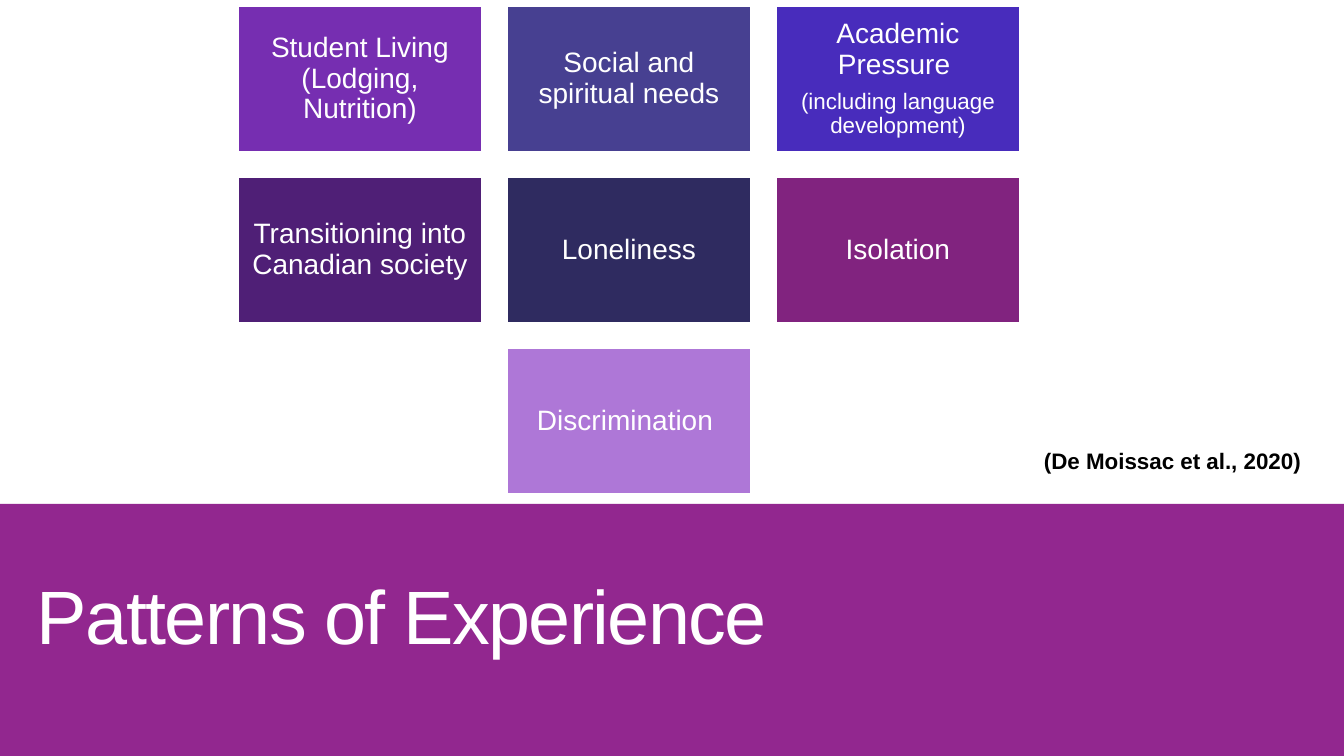
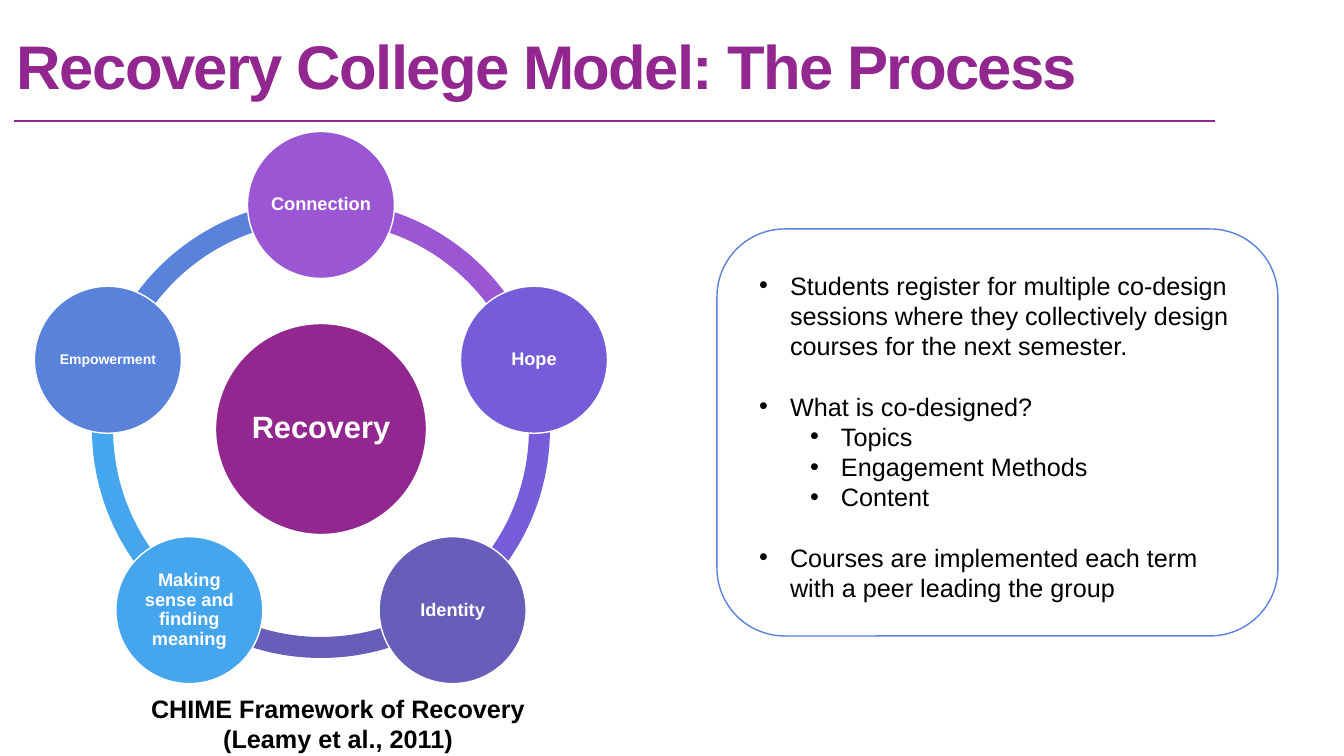
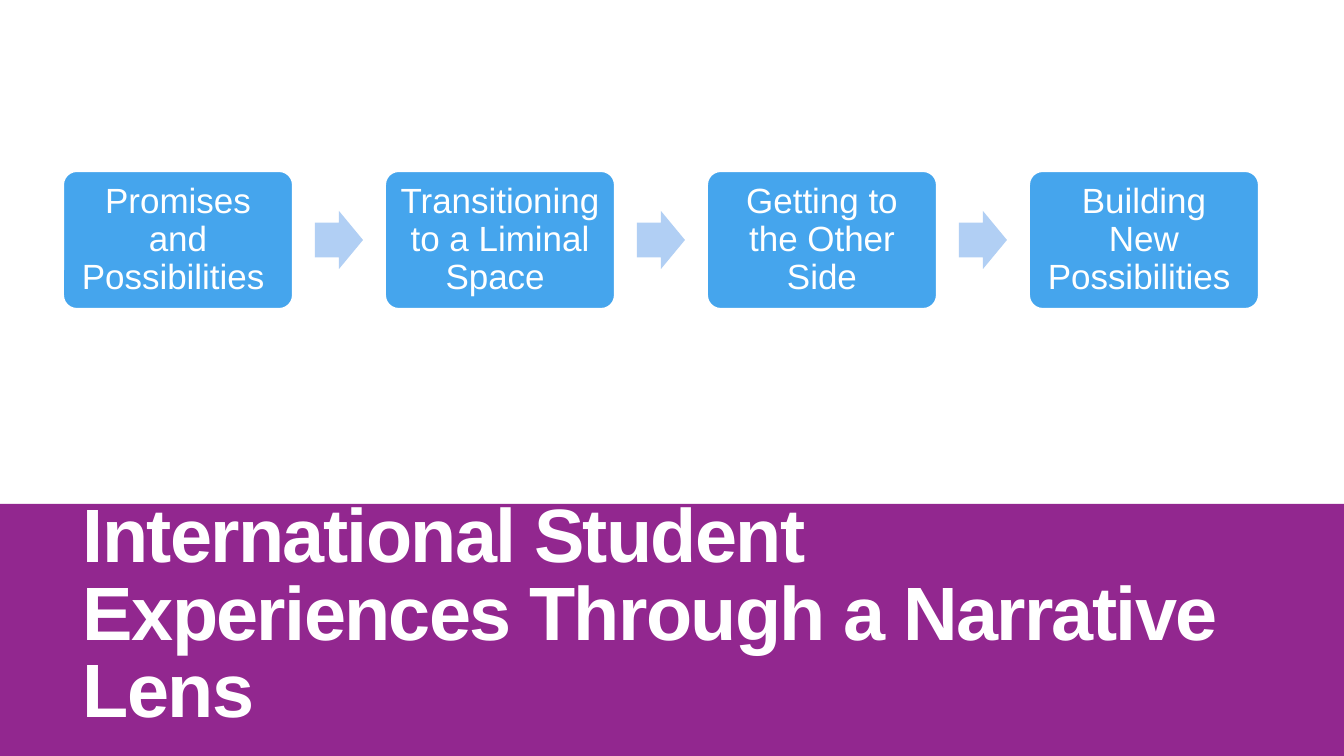
from dataclasses import dataclass
from math import cos, radians, sin

from lxml.etree import SubElement
from pptx import Presentation
from pptx.dml.color import RGBColor
from pptx.enum.shapes import MSO_CONNECTOR, MSO_SHAPE as SHAPE
from pptx.enum.text import MSO_ANCHOR as ANCHOR, MSO_AUTO_SIZE, PP_ALIGN as ALIGN
from pptx.oxml.ns import qn
from pptx.util import Emu, Pt

WIDTH, HEIGHT = 1344, 756
SCALE = 12192000 / WIDTH


@dataclass(frozen=True)
class Theme:
    font: str = "Arial"
    plum: str = "92278F"
    white: str = "FFFFFF"
    black: str = "000000"
    orchid: str = "9B57D3"
    violet: str = "755DD9"
    indigo: str = "665EB8"
    sky: str = "45A5ED"
    blue: str = "5982DB"
    pale_blue: str = "B1CFF4"
    band_title: int = 54
    page_title: int = 44
    step: int = 25
    core: int = 22
    card: int = 20
    body: int = 18
    note: int = 16
    node: int = 13
    small_node: int = 10


T = Theme()

# Rows of cards: fill and (text, size) paragraphs
PATTERNS = [
    [("762EB1", [("Student Living (Lodging, Nutrition)", T.card)]),
     ("474091", [("Social and spiritual needs", T.card)]),
     ("482CBC", [("Academic Pressure ", T.card),
                 ("(including language development)", T.note)])],
    [("4F1F76", [("Transitioning into Canadian society", T.card)]),
     ("2F2B60", [("Loneliness", T.card)]),
     ("81237F", [("Isolation", T.card)])],
    [("AE77D7", [("Discrimination ", T.card)])],
]

# Wheel nodes, clockwise from the top
NODES = [
    ("Connection", T.orchid, T.node),
    ("Hope", T.violet, T.node),
    ("Identity", T.indigo, T.node),
    ("Making sense and finding meaning", T.sky, T.node),
    ("Empowerment", T.blue, T.small_node),
]

# Text, level, space before in points
PROCESS = [
    ("Students register for multiple co-design sessions where they "
     "collectively design courses for the next semester.", 0, 0),
    ("What is co-designed?", 0, 21.5),
    ("Topics", 1, 0),
    ("Engagement Methods", 1, 0),
    ("Content", 1, 0),
    ("Courses are implemented each term with a peer leading the group", 0, 21.5),
]

STEPS = [
    "Promises and Possibilities ",
    "Transitioning to a Liminal Space ",
    "Getting to the Other Side",
    "Building New Possibilities ",
]


def px(n):
    return Emu(round(n * SCALE))


def rgb(value):
    return RGBColor.from_string(value)


# Text
def style(p, size, color, bold=False):
    for r in p.runs:
        r.font.name, r.font.size, r.font.bold = T.font, Pt(size), bold
        r.font.color.rgb = rgb(color)


def set_frame(tf, inset_x, inset_y, anchor):
    tf.word_wrap, tf.auto_size = True, MSO_AUTO_SIZE.NONE
    tf.vertical_anchor = anchor
    tf.margin_left = tf.margin_right = px(inset_x)
    tf.margin_top = tf.margin_bottom = px(inset_y)


def place(sp, left, top, width, height):
    sp.left, sp.top, sp.width, sp.height = map(px, (left, top, width, height))


def add_title(slide, text, box, size, color, bold=False):
    sp = slide.shapes.title
    place(sp, *box)
    set_frame(sp.text_frame, 10, 5, ANCHOR.MIDDLE)
    p = sp.text_frame.paragraphs[0]
    p.text = text
    p.alignment, p.line_spacing = ALIGN.LEFT, 0.85
    style(p, size, color, bold)
    for r in p.runs:
        r.font._element.set("spc", "-120")


def add_note(slide, lines, box, size, align):
    tf = slide.shapes.add_textbox(*map(px, box)).text_frame
    set_frame(tf, 10, 5, ANCHOR.TOP)
    tf.text = "\n".join(lines)
    for p in tf.paragraphs:
        p.alignment = align
        style(p, size, T.black, True)


def add_bullets(sp, items, box):
    place(sp, *box)
    tf = sp.text_frame
    set_frame(tf, 10, 5, ANCHOR.TOP)
    tf.text = "\n".join(text for text, _, _ in items)
    for p, (_, level, before) in zip(tf.paragraphs, items):
        p.level = level
        p.space_before = Pt(before)
        pPr = p._p.get_or_add_pPr()
        pPr.set("marL", str(px(31 + 51 * level)))
        pPr.set("indent", str(px(-31)))
        SubElement(pPr, qn("a:buFont")).set("typeface", T.font)
        SubElement(pPr, qn("a:buChar")).set("char", "•")
        style(p, T.body, T.black)


# Shapes
def add_shape(slide, kind, box, fill, line=None, weight=1, adjust=()):
    sp = slide.shapes.add_shape(kind, *map(px, box))
    sp.shadow.inherit = False
    sp.fill.solid()
    sp.fill.fore_color.rgb = rgb(fill)
    if line:
        sp.line.color.rgb, sp.line.width = rgb(line), Pt(weight)
    else:
        sp.line.fill.background()
    for i, value in enumerate(adjust):
        sp.adjustments[i] = value
    return sp


def add_label(sp, paragraphs, inset, bold=False):
    tf = sp.text_frame
    set_frame(tf, inset, inset, ANCHOR.MIDDLE)
    tf.text = "\n".join(text for text, _ in paragraphs)
    for p, (_, size) in zip(tf.paragraphs, paragraphs):
        p.alignment, p.line_spacing = ALIGN.CENTER, 0.9
        style(p, size, T.white, bold)
    for p in tf.paragraphs[:-1]:
        p.space_after = Pt(7)


def add_disc(slide, cx, cy, size, fill, text, points):
    box = (cx - size / 2, cy - size / 2, size, size)
    sp = add_shape(slide, SHAPE.OVAL, box, fill, T.white)
    add_label(sp, [(text, points)], 2, True)


def send_to_back(slide, sp):
    slide.shapes._spTree.insert(2, sp._element)


def add_band(slide):
    send_to_back(slide, add_shape(slide, SHAPE.RECTANGLE, (0, 504, WIDTH, 252), T.plum))


def add_rule(slide, x1, x2, y):
    line = slide.shapes.add_connector(MSO_CONNECTOR.STRAIGHT, *map(px, (x1, y, x2, y)))
    line.line.color.rgb, line.line.width = rgb(T.plum), Pt(0.75)
    SubElement(line._element.spPr, qn("a:effectLst"))


# Diagrams
def add_card_grid(slide, rows, left, top, width, height, gap):
    columns = max(map(len, rows))
    for i, row in enumerate(rows):
        indent = (columns - len(row)) / 2
        for j, (fill, paragraphs) in enumerate(row):
            box = (left + (indent + j) * (width + gap), top + i * (height + gap),
                   width, height)
            add_label(add_shape(slide, SHAPE.RECTANGLE, box, fill, T.white), paragraphs, 8)


def add_wheel(slide, cx, cy, ring, orbit):
    turn = 360 / len(NODES)
    for i, (_, fill, _) in reversed(list(enumerate(NODES))):
        start, end = (270 + turn * i) % 360, (270 + turn * (i + 1)) % 360
        # Adjustments count 100000ths, angles 60000ths of a degree
        add_shape(slide, SHAPE.BLOCK_ARC, (cx - ring / 2, cy - ring / 2, ring, ring),
                  fill, adjust=(start * 0.6, end * 0.6, 0.046))
    add_disc(slide, cx, cy, 211, T.plum, "Recovery ", T.core)
    for i, (text, fill, size) in enumerate(NODES):
        angle = radians(turn * i - 90)
        add_disc(slide, cx + orbit * cos(angle), cy + orbit * sin(angle), 147,
                 fill, text, size)


def add_steps(slide, steps, left, top, width, height, gap):
    arrow_w, arrow_h = 48, 58
    for i, text in enumerate(steps):
        x = left + i * (width + gap)
        if i:
            box = (x - (gap + arrow_w) / 2, top + (height - arrow_h) / 2, arrow_w, arrow_h)
            add_shape(slide, SHAPE.RIGHT_ARROW, box, T.pale_blue, adjust=(0.6, 0.5))
        sp = add_shape(slide, SHAPE.ROUNDED_RECTANGLE, (x, top, width, height),
                       T.sky, T.white, 1.5, (0.1,))
        add_label(sp, [(text, T.step)], 10)


# Slides
def patterns_slide(prs):
    slide = prs.slides.add_slide(prs.slide_layouts[5])
    add_band(slide)
    add_title(slide, "Patterns of Experience", (27, 530, 1187, 182), T.band_title, T.white)
    add_card_grid(slide, PATTERNS, 238, 6, 244, 146, 25)
    add_note(slide, ["(De Moissac et al., 2020)"], (1034, 442, 279, 37), T.note, ALIGN.LEFT)


def process_slide(prs):
    slide = prs.slides.add_slide(prs.slide_layouts[1])
    panel = add_shape(slide, SHAPE.ROUNDED_RECTANGLE, (717, 229, 561, 407), T.white, T.blue)
    send_to_back(slide, panel)
    add_title(slide, "Recovery College Model: The Process", (7, 0, 1187, 142),
              T.page_title, T.plum, True)
    add_wheel(slide, 321, 429, 458, 224)
    add_rule(slide, 14, 1215, 121)
    add_note(slide, ["CHIME Framework of Recovery", "(Leamy et al., 2011)"],
             (139, 688, 398, 72), T.body, ALIGN.CENTER)
    add_bullets(slide.placeholders[1], PROCESS, (749, 265, 497, 346))


def narrative_slide(prs):
    slide = prs.slides.add_slide(prs.slide_layouts[5])
    add_band(slide)
    add_title(slide, "International Student Experiences Through a Narrative Lens",
              (73, 526, 1187, 182), T.band_title, T.white, True)
    add_steps(slide, STEPS, 63, 171, 230, 138, 92)


def main():
    prs = Presentation()
    prs.slide_width, prs.slide_height = px(WIDTH), px(HEIGHT)
    patterns_slide(prs)
    process_slide(prs)
    narrative_slide(prs)
    prs.save("out.pptx")


if __name__ == "__main__":
    main()
